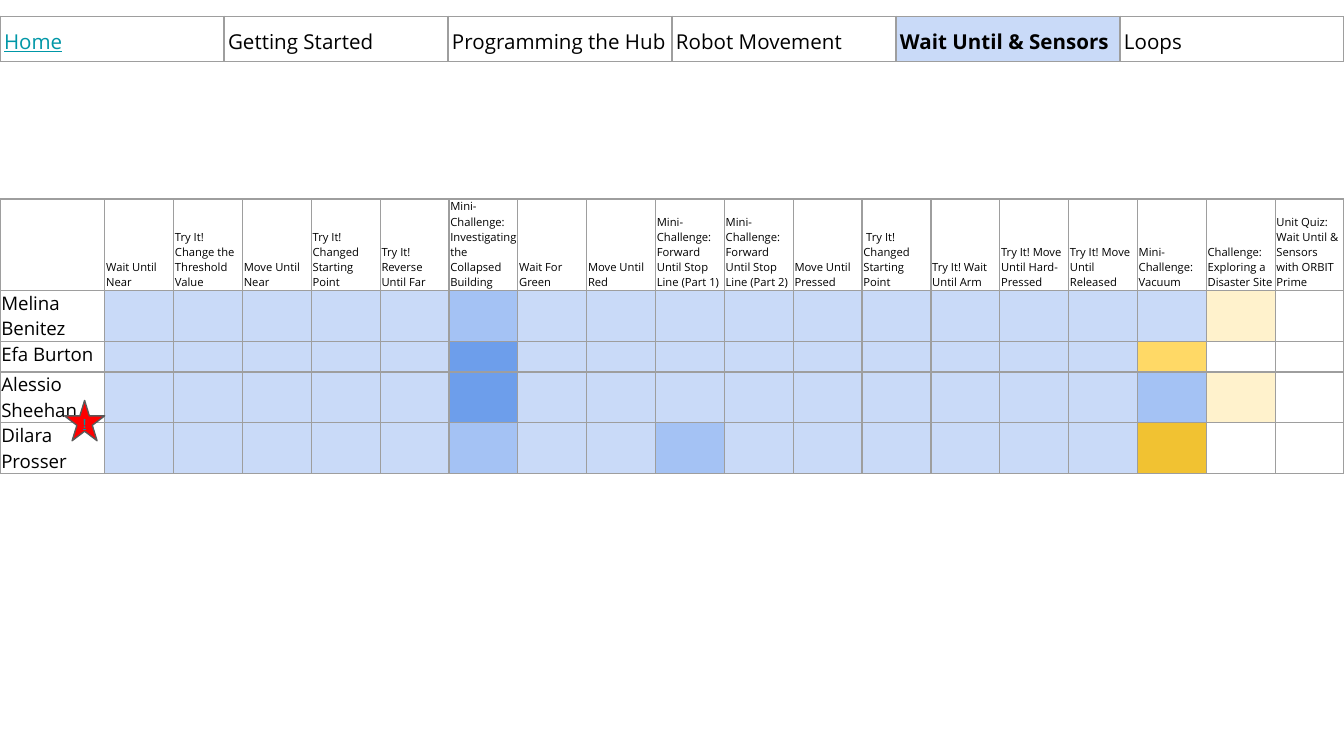
from pptx import Presentation
from pptx.dml.color import RGBColor
from pptx.enum.shapes import MSO_SHAPE
from pptx.enum.text import MSO_ANCHOR, PP_ALIGN
from pptx.oxml.xmlchemy import OxmlElement
from pptx.util import Inches, Pt

LIGHT, MEDIUM, STRONG = "C9DAF8", "A4C2F4", "6D9EEB"
CREAM, YELLOW, GOLD = "FFF2CC", "FFD966", "F1C232"

UNITS = ["Home", "Getting Started", "Programming the Hub", "Robot Movement",
         "Wait Until & Sensors", "Loops"]
CURRENT_UNIT = "Wait Until & Sensors"

LESSONS = [
    "Wait Until Near",
    "Try It! Change the Threshold Value",
    "Move Until Near",
    "Try It! Changed Starting Point",
    "Try It! Reverse Until Far",
    "Mini-Challenge: Investigating the Collapsed Building",
    "Wait For Green",
    "Move Until Red",
    "Mini-Challenge: Forward Until Stop Line (Part 1)",
    "Mini-Challenge: Forward Until Stop Line (Part 2)",
    "Move Until Pressed",
    " Try It! Changed Starting Point",
    "Try It! Wait Until Arm",
    "Try It! Move Until Hard-Pressed",
    "Try It! Move Until Released",
    "Mini-Challenge: Vacuum",
    "Challenge: Exploring a Disaster Site",
    "Unit Quiz: Wait Until & Sensors with ORBIT Prime",
]
COMPLETED = {column: LIGHT for column in range(1, 17)}
STUDENTS = {
    "Melina Benitez": {6: MEDIUM, 17: CREAM},
    "Efa Burton": {6: STRONG, 16: YELLOW},
    "Alessio Sheehan": {6: STRONG, 16: MEDIUM, 17: CREAM},
    "Dilara Prosser": {6: MEDIUM, 9: MEDIUM, 16: GOLD},
}


def color(value):
    return RGBColor.from_string(value)


def style_font(font, size, value="000000", name="Open Sans", bold=False, underline=False):
    font.name = name
    font.size = Pt(size)
    font.bold = bold
    font.underline = underline
    font.color.rgb = color(value)


def add_borders(cell):
    properties = cell._tc.get_or_add_tcPr()
    for position, side in enumerate(("lnL", "lnR", "lnT", "lnB")):
        line = OxmlElement(f"a:{side}")
        line.set("w", str(Pt(0.75)))
        fill = OxmlElement("a:solidFill")
        shade = OxmlElement("a:srgbClr")
        shade.set("val", "9E9E9E")
        fill.append(shade)
        line.append(fill)
        properties.insert(position, line)


def fill_cell(cell, text, size, fill, margins, anchor, **font_style):
    cell.margin_left = cell.margin_right = Inches(margins[0])
    cell.margin_top = cell.margin_bottom = Inches(margins[1])
    cell.vertical_anchor = anchor
    if fill:
        cell.fill.solid()
        cell.fill.fore_color.rgb = color(fill)
    else:
        cell.fill.background()
    add_borders(cell)
    para = cell.text_frame.paragraphs[0]
    if text:
        para.text = text
    else:
        ending = OxmlElement("a:endParaRPr")
        ending.set("sz", str(size * 100))
        para._p.append(ending)
    style_font(para.font, size, **font_style)


def add_grid(page, left, top, widths, heights):
    frame = page.shapes.add_table(len(heights), len(widths), Inches(left), Inches(top),
                                  Inches(sum(widths)), Inches(sum(heights)))
    table = frame.table
    table.first_row = table.horz_banding = False
    for column, width in zip(table.columns, widths):
        column.width = Inches(width)
    for row, height in zip(table.rows, heights):
        row.height = Inches(height)
    return table


def add_navigation(page, left, top, width, height):
    table = add_grid(page, left, top, [width / len(UNITS)] * len(UNITS), [height])
    for column, unit in enumerate(UNITS):
        current, home = unit == CURRENT_UNIT, unit == "Home"
        fill_cell(table.cell(0, column), unit, 11, LIGHT if current else None,
                  (0.03, 0.05), MSO_ANCHOR.BOTTOM, bold=current, underline=home,
                  value="0097A7" if home else "000000")


def add_progress(page, left, top, width, name_width, heights):
    lesson_width = (width - name_width) / len(LESSONS)
    table = add_grid(page, left, top, [name_width] + [lesson_width] * len(LESSONS), heights)
    margins = (0.01, 0)
    for column, lesson in enumerate([""] + LESSONS):
        fill_cell(table.cell(0, column), lesson, 6, None, margins, MSO_ANCHOR.BOTTOM)
    for row, (student, exceptions) in enumerate(STUDENTS.items(), 1):
        fills = COMPLETED | exceptions
        fill_cell(table.cell(row, 0), student, 10, None, margins, MSO_ANCHOR.TOP)
        for column in range(1, len(LESSONS) + 1):
            fill_cell(table.cell(row, column), "", 6, fills.get(column),
                      margins, MSO_ANCHOR.TOP)


def add_star(page, left, top, size):
    star = page.shapes.add_shape(MSO_SHAPE.STAR_5_POINT, Inches(left), Inches(top),
                                 Inches(size), Inches(size))
    star.shadow.inherit = False
    star.fill.solid()
    star.fill.fore_color.rgb = color("FF0000")
    star.line.color.rgb = color("595959")
    star.line.width = Pt(0.75)
    box = star.text_frame
    box.margin_left = box.margin_right = box.margin_top = box.margin_bottom = 0
    box.vertical_anchor = MSO_ANCHOR.MIDDLE
    para = box.paragraphs[0]
    para.text = "!"
    para.alignment = PP_ALIGN.CENTER
    style_font(para.font, 7, "0097A7", "Arial Narrow", bold=True, underline=True)


def main():
    deck = Presentation()
    deck.slide_width = Inches(10)
    deck.slide_height = deck.slide_width * 9 // 16
    page = deck.slides.add_slide(deck.slide_layouts[6])
    add_progress(page, 0, 1.48, 10, 0.78, [0.57, 0.23, 0.23, 0.23, 0.35])
    add_navigation(page, 0, 0.12, 10, 0.34)
    add_star(page, 0.48, 2.98, 0.3)
    deck.save("out.pptx")


if __name__ == "__main__":
    main()
